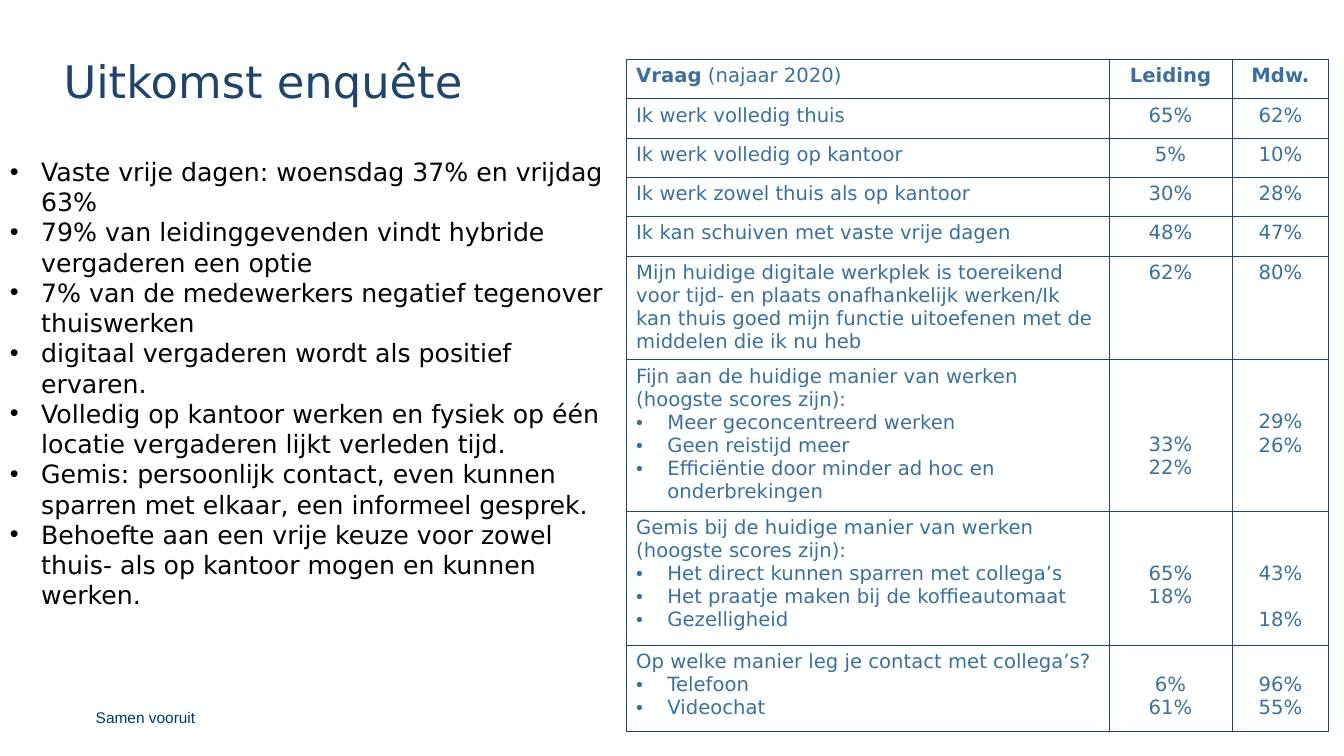
import pptx
import pptx.dml.color
import pptx.enum.text
import pptx.oxml
import pptx.oxml.ns
import pptx.util

Inches, Pt = pptx.util.Inches, pptx.util.Pt
ALIGN = pptx.enum.text.PP_ALIGN
COLORS = {"back": "FEFFFF", "navy": "20446B", "blue": "3C6F9C",
          "footer": "003859", "black": "000000"}
LINE = 16.4  # height in points of one table text line

POINTS = [
    "Vaste vrije dagen: woensdag 37% en vrijdag 63%",
    "79% van leidinggevenden vindt hybride vergaderen een optie",
    "7% van de medewerkers negatief tegenover thuiswerken",
    "digitaal vergaderen wordt als positief ervaren.",
    "Volledig op kantoor werken en fysiek op één locatie vergaderen lijkt verleden tijd.",
    "Gemis: persoonlijk contact, even kunnen sparren met elkaar, een informeel gesprek.",
    "Behoefte aan een vrije keuze voor zowel thuis- als op kantoor mogen en kunnen werken.",
]

# Row height, question, bulleted answers, then per group the value on each text line
ROWS = [
    (0.39, "Ik werk volledig thuis", [], {0: "65%"}, {0: "62%"}),
    (0.39, "Ik werk volledig op kantoor", [], {0: "5%"}, {0: "10%"}),
    (0.39, "Ik werk zowel thuis als op kantoor", [], {0: "30%"}, {0: "28%"}),
    (0.39, "Ik kan schuiven met vaste vrije dagen", [], {0: "48%"}, {0: "47%"}),
    (1.03, "Mijn huidige digitale werkplek is toereikend voor tijd- en plaats "
           "onafhankelijk werken/Ik kan thuis goed mijn functie uitoefenen met de "
           "middelen die ik nu heb", [], {0: "62%"}, {0: "80%"}),
    (1.5, "Fijn aan de huidige manier van werken (hoogste scores zijn):",
     ["Meer geconcentreerd werken", "Geen reistijd meer",
      "Efficiëntie door minder ad hoc en onderbrekingen"],
     {3: "33%", 4: "22%"}, {2: "29%", 3: "26%"}),
    (1.33, "Gemis bij de huidige manier van werken (hoogste scores zijn):",
     ["Het direct kunnen sparren met collega’s",
      "Het praatje maken bij de koffieautomaat", "Gezelligheid"],
     {2: "65%", 3: "18%"}, {2: "43%", 4: "18%"}),
    (0.86, "Op welke manier leg je contact met collega’s?",
     ["Telefoon", "Videochat"], {1: "6%", 2: "61%"}, {1: "96%", 2: "55%"}),
]


class Deck:
    title_font = {"name": "DejaVu Sans", "size": Pt(32), "color": "navy"}
    list_font = {"name": "DejaVu Sans", "size": Pt(18), "color": "black"}
    cell_font = {"name": "DejaVu Sans", "size": Pt(14), "color": "blue", "bold": False}
    footer_font = {"name": "Arial", "size": Pt(11), "color": "footer"}

    def __init__(self, prs):
        self.s = prs.slides.add_slide(prs.slide_layouts[5])
        fill = self.s.background.fill
        fill.solid()
        fill.fore_color.rgb = self.rgb("back")

    def rgb(self, key):
        return pptx.dml.color.RGBColor.from_string(COLORS[key])

    def place(self, sp, box):
        for name, value in zip(("left", "top", "width", "height"), box):
            setattr(sp, name, Inches(value))

    def run(self, p, text, style):
        r = p.add_run()
        r.text = text
        for name, value in style.items():
            if name == "color":
                r.font.color.rgb = self.rgb(value)
            else:
                setattr(r.font, name, value)

    def paragraph(self, tf, text, style, bullet=False, **props):
        # The first, still empty paragraph is used before new ones are added
        p = tf.paragraphs[0] if not tf.text else tf.add_paragraph()
        if bullet:
            pPr = p._p.get_or_add_pPr()
            pPr.set("marL", str(Inches(0.31)))
            pPr.set("indent", str(-Inches(0.31)))
            ns = pptx.oxml.ns.nsdecls("a")
            for xml in (f'<a:buFont {ns} typeface="Arial"/>', f'<a:buChar {ns} char="•"/>'):
                pPr.append(pptx.oxml.parse_xml(xml))
        for name, value in props.items():
            setattr(p, name, value)
        self.run(p, text, style)
        return p

    def frame(self, tf, margin=None):
        tf.word_wrap = True
        tf.auto_size = pptx.enum.text.MSO_AUTO_SIZE.NONE
        tf.vertical_anchor = pptx.enum.text.MSO_ANCHOR.TOP
        if margin is not None:
            for side in ("left", "top", "right", "bottom"):
                setattr(tf, "margin_" + side, Inches(margin))
        return tf

    def title(self, text, box):
        sp = self.s.shapes.title
        self.place(sp, box)
        self.paragraph(self.frame(sp.text_frame, 0), text, self.title_font,
                       alignment=ALIGN.LEFT, line_spacing=0.9)

    def text(self, texts, box, style, bullet=False, margin=None):
        sp = self.s.shapes.add_textbox(*map(Inches, box))
        tf = self.frame(sp.text_frame, margin)
        for text in texts:
            self.paragraph(tf, text, style, bullet)

    def borders(self, cell):
        tcPr = cell._tc.get_or_add_tcPr()
        for i, side in enumerate(("lnL", "lnR", "lnT", "lnB")):
            tcPr.insert(i, pptx.oxml.parse_xml(
                f'<a:{side} {pptx.oxml.ns.nsdecls("a")} w="{Pt(0.6)}"><a:solidFill>'
                f'<a:srgbClr val="{COLORS["navy"]}"/></a:solidFill></a:{side}>'))

    def values(self, cell, lines):
        previous = None
        for line, text in lines.items():
            if previous is None:
                cell.margin_top = Inches(0.05) + Pt(LINE * line)
                props = {}
            else:
                props = {"space_before": Pt(LINE * (line - previous - 1))}
            self.paragraph(cell.text_frame, text, self.cell_font,
                           alignment=ALIGN.CENTER, **props)
            previous = line

    def table(self, rows, box, widths, header_height):
        shape = self.s.shapes.add_table(len(rows) + 1, len(widths), *map(Inches, box))
        table = shape.table
        table.first_row = table.horz_banding = False
        for column, width in zip(table.columns, widths):
            column.width = Inches(width)
        for cell in table.iter_cells():
            cell.fill.background()
            self.borders(cell)

        # Header row
        table.rows[0].height = Inches(header_height)
        bold = {**self.cell_font, "bold": True}
        p = self.paragraph(table.cell(0, 0).text_frame, "Vraag", bold)
        self.run(p, " (najaar 2020)", self.cell_font)
        for c, group in enumerate(("Leiding", "Mdw."), 1):
            self.paragraph(table.cell(0, c).text_frame, group, bold,
                           alignment=ALIGN.CENTER)

        # Questions and scores
        for i, (height, question, answers, *groups) in enumerate(rows, 1):
            table.rows[i].height = Inches(height)
            tf = table.cell(i, 0).text_frame
            self.paragraph(tf, question, self.cell_font)
            for answer in answers:
                self.paragraph(tf, answer, self.cell_font, bullet=True)
            for c, lines in enumerate(groups, 1):
                self.values(table.cell(i, c), lines)


def main():
    prs = pptx.Presentation()
    prs.slide_width, prs.slide_height = Inches(13.33), Inches(7.5)
    deck = Deck(prs)
    deck.title("Uitkomst enquête", (0.63, 0.59, 12.12, 1.05))
    deck.text(["Samen vooruit"], (0.95, 7.02, 6.76, 0.19), deck.footer_font, margin=0)
    deck.text(POINTS, (0, 1.5, 6.21, 4.95), deck.list_font, bullet=True)
    deck.table(ROWS, (6.21, 0.59, 6.97, 6.67), (4.79, 1.22, 0.96), header_height=0.39)
    prs.save("out.pptx")


if __name__ == "__main__":
    main()
